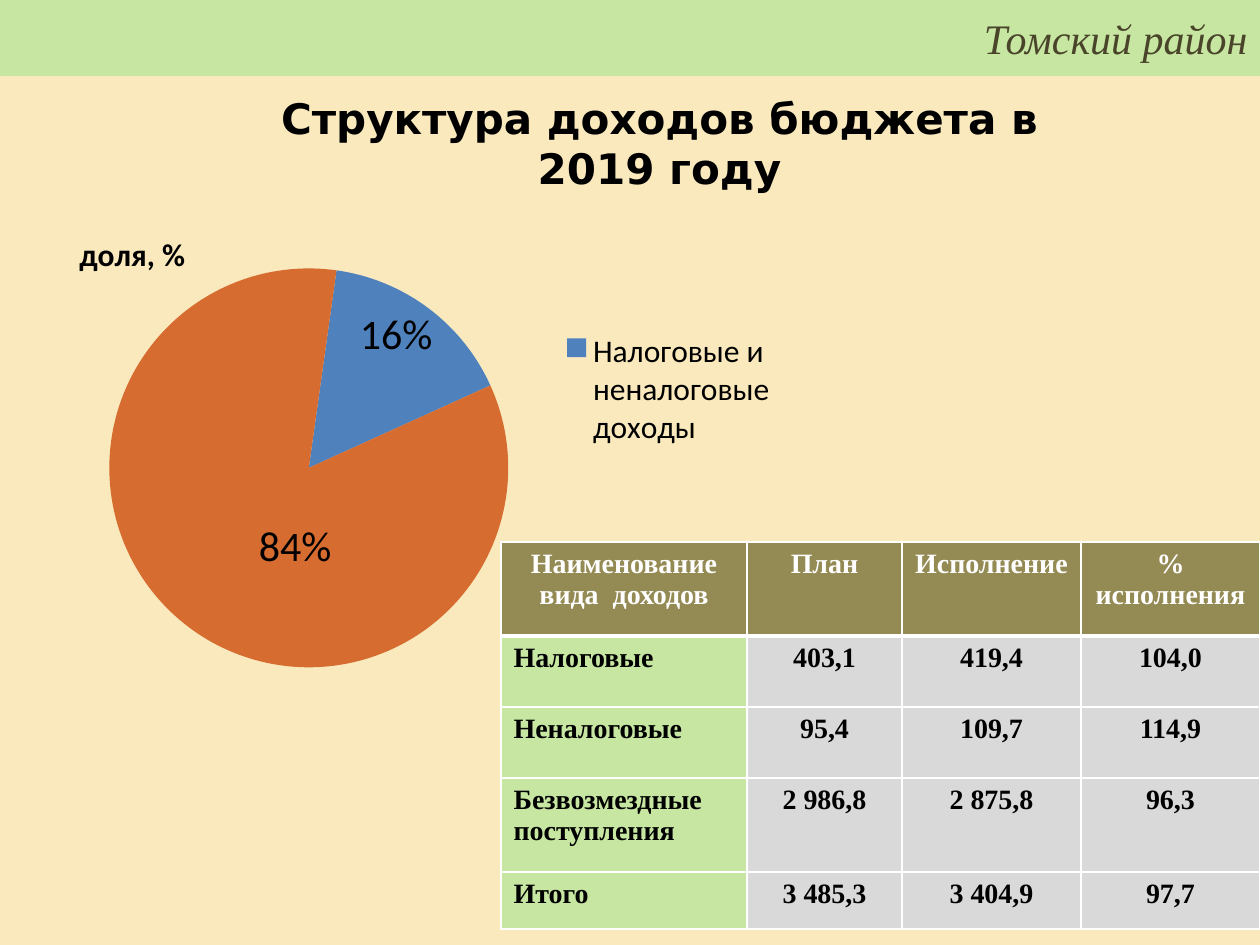
import pptx
import pptx.chart.data
import pptx.dml.color
import pptx.enum.chart
import pptx.enum.shapes
import pptx.enum.text
import pptx.oxml
import pptx.oxml.ns
import pptx.util

RGBColor = pptx.dml.color.RGBColor
ALIGN = pptx.enum.text.PP_ALIGN
ANCHOR = pptx.enum.text.MSO_ANCHOR

CREAM = RGBColor(0xF9, 0xE9, 0xBD)
GREEN = RGBColor(0xC6, 0xE6, 0xA2)
OLIVE = RGBColor(0x94, 0x8A, 0x54)
DARK_OLIVE = RGBColor(0x4A, 0x45, 0x2A)
GREY = RGBColor(0xD9, 0xD9, 0xD9)
BLUE = RGBColor(0x4F, 0x81, 0xBD)
ORANGE = RGBColor(0xD7, 0x6C, 0x31)
BLACK = RGBColor(0, 0, 0)
WHITE = RGBColor(255, 255, 255)

SERIF = "Times New Roman"
EMU_PER_PX = 914400 / 126

REVENUE = [
    ["Наименование вида  доходов", "План", "Исполнение", "% исполнения"],
    ["Налоговые", "403,1", "419,4", "104,0"],
    ["Неналоговые", "95,4", "109,7", "114,9"],
    ["Безвозмездные поступления", "2 986,8", "2 875,8", "96,3"],
    ["Итого", "3 485,3", "3 404,9", "97,7"],
]


def px(*lengths):
    return [pptx.util.Emu(round(length * EMU_PER_PX)) for length in lengths]


def format_font(font, size, name, color=BLACK, bold=False, italic=False):
    font.size = pptx.util.Pt(size)
    font.name = name
    font.bold = bold
    font.italic = italic
    font.color.rgb = color


def write_text(frame, text, align=ALIGN.LEFT, anchor=ANCHOR.TOP, **font_format):
    frame.word_wrap = True
    frame.vertical_anchor = anchor
    paragraph = frame.paragraphs[0]
    paragraph.alignment = align
    run = paragraph.add_run()
    run.text = text
    format_font(run.font, **font_format)


def chart_layout(x, y, width=None, height=None, inner=False, edge=True):
    parts = ['<c:layoutTarget val="inner"/>'] if inner else []
    if edge:
        parts += ['<c:xMode val="edge"/>', '<c:yMode val="edge"/>']
    for tag, value in zip("xywh", (x, y, width, height)):
        if value is not None:
            parts.append(f'<c:{tag} val="{value}"/>')
    return pptx.oxml.parse_xml(
        f'<c:layout {pptx.oxml.ns.nsdecls("c")}><c:manualLayout>'
        f'{"".join(parts)}</c:manualLayout></c:layout>')


def place_after(anchor, layout):
    for old in anchor.getparent().findall(pptx.oxml.ns.qn("c:layout")):
        old.getparent().remove(old)
    anchor.addnext(layout)


class BudgetSlide:
    def __init__(self, presentation):
        self.slide = presentation.slides.add_slide(presentation.slide_layouts[5])
        self.slide.background.fill.solid()
        self.slide.background.fill.fore_color.rgb = CREAM

    def band(self, box, text):
        district = self.slide.shapes.add_shape(
            pptx.enum.shapes.MSO_SHAPE.RECTANGLE, *px(*box))
        district.shadow.inherit = False
        district.fill.solid()
        district.fill.fore_color.rgb = GREEN
        district.line.fill.background()
        write_text(district.text_frame, text, align=ALIGN.RIGHT, anchor=ANCHOR.MIDDLE,
                   size=24, name=SERIF, color=DARK_OLIVE, italic=True)

    def title(self, box, text):
        heading = self.slide.shapes.title
        heading.left, heading.top, heading.width, heading.height = px(*box)
        write_text(heading.text_frame, text, align=ALIGN.CENTER,
                   size=24, name="DejaVu Sans", bold=True)
        heading.text_frame.auto_size = pptx.enum.text.MSO_AUTO_SIZE.SHAPE_TO_FIT_TEXT

    def pie(self, box, name, shares, label_shifts):
        share_data = pptx.chart.data.CategoryChartData(number_format="0%")
        share_data.categories = [category for category, _, _ in shares]
        share_data.add_series(name, [share for _, share, _ in shares])
        chart = self.slide.shapes.add_chart(
            pptx.enum.chart.XL_CHART_TYPE.PIE, *px(*box), share_data).chart
        format_font(chart.font, size=18, name="Calibri")

        chart.has_title = True
        write_text(chart.chart_title.text_frame, name, align=ALIGN.CENTER,
                   size=18, name="Calibri", bold=True)
        chart.chart_title.include_in_layout = False
        place_after(chart.chart_title._element.find(pptx.oxml.ns.qn("c:tx")),
                    chart_layout(0.08, 0.06))

        chart.has_legend = True
        chart.legend.position = pptx.enum.chart.XL_LEGEND_POSITION.RIGHT
        chart.legend.include_in_layout = False
        hidden_entry = pptx.oxml.parse_xml(
            f'<c:legendEntry {pptx.oxml.ns.nsdecls("c")}>'
            '<c:idx val="1"/><c:delete val="1"/></c:legendEntry>')
        place_after(chart.legend._element.find(pptx.oxml.ns.qn("c:legendPos")),
                    hidden_entry)
        place_after(hidden_entry, chart_layout(0.6, 0.25, 0.25, 0.24))

        plot = chart.plots[0]
        plot.vary_by_categories = True
        plot_area = plot._element.getparent()
        for old in plot_area.findall(pptx.oxml.ns.qn("c:layout")):
            plot_area.remove(old)
        plot_area.insert(0, chart_layout(0.05, 0.14, 0.57, 0.76, inner=True))
        for angle in plot._element.findall(pptx.oxml.ns.qn("c:firstSliceAng")):
            plot._element.remove(angle)
        plot._element.append(pptx.oxml.parse_xml(
            f'<c:firstSliceAng {pptx.oxml.ns.nsdecls("c")} val="8"/>'))

        series = plot.series[0]
        labels = series.data_labels
        labels.show_value = True
        labels.number_format = "0%"
        labels.number_format_is_linked = False
        format_font(labels.font, size=24, name="Calibri")
        for index, ((_, _, color), shift) in enumerate(zip(shares, label_shifts)):
            point = series.points[index]
            point.format.fill.solid()
            point.format.fill.fore_color.rgb = color
            label = point.data_label
            format_font(label.font, size=24, name="Calibri")
            label.position = pptx.enum.chart.XL_LABEL_POSITION.CENTER
            label_xml = labels._element.findall(pptx.oxml.ns.qn("c:dLbl"))[index]
            place_after(label_xml[0], chart_layout(*shift, edge=False))

    def table(self, left, top, widths, heights, rows):
        revenue = self.slide.shapes.add_table(
            len(rows), len(widths),
            *px(left, top, sum(widths), sum(heights))).table
        revenue.horz_banding = False
        for column, width in zip(revenue.columns, px(*widths)):
            column.width = width
        for row, height in zip(revenue.rows, px(*heights)):
            row.height = height
        for r, texts in enumerate(rows):
            for c, text in enumerate(texts):
                cell = revenue.cell(r, c)
                cell.fill.solid()
                cell.fill.fore_color.rgb = OLIVE if r == 0 else GREY if c else GREEN
                write_text(cell.text_frame, text,
                           align=ALIGN.LEFT if r and not c else ALIGN.CENTER,
                           size=16, name=SERIF, bold=True,
                           color=BLACK if r else WHITE)
                self.borders(cell, L=1, R=1, T=3 if r == 1 else 1, B=1 if r else 3)

    def borders(self, cell, **points):
        properties = cell._tc.get_or_add_tcPr()
        for order, (side, width) in enumerate(points.items()):
            properties.insert(order, pptx.oxml.parse_xml(
                f'<a:ln{side} {pptx.oxml.ns.nsdecls("a")} w="{pptx.util.Pt(width)}">'
                f'<a:solidFill><a:srgbClr val="{WHITE}"/></a:solidFill></a:ln{side}>'))


def main():
    presentation = pptx.Presentation()
    presentation.slide_width, presentation.slide_height = px(1260, 945)
    budget = BudgetSlide(presentation)
    budget.band((0, 0, 1260, 76), "Томский район")
    budget.title((243, 86, 833, 115), "Структура доходов бюджета в 2019 году")
    budget.pie((0, 195, 922, 525), "доля, %",
               [("Налоговые и неналоговые доходы", 0.16, BLUE),
                ("Безвозмездные поступления", 0.84, ORANGE)],
               [(0.03, -0.1), (0.05, 0)])
    budget.table(501, 542, [246, 155, 179, 179], [94, 71, 71, 94, 57], REVENUE)
    presentation.save("out.pptx")


if __name__ == "__main__":
    main()
